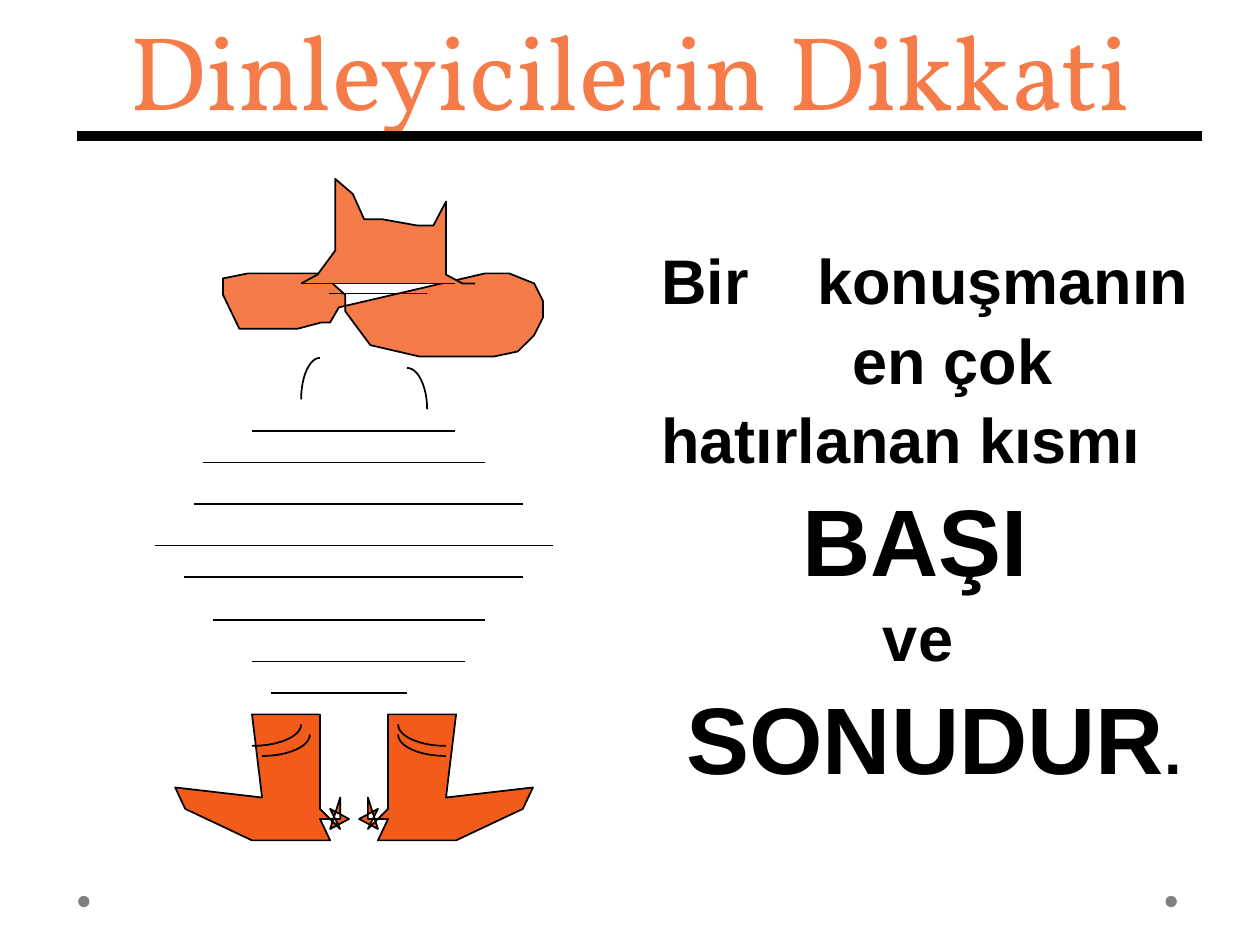
from dataclasses import dataclass
from typing import Any

from lxml import etree
from pptx import Presentation
from pptx.dml.color import RGBColor
from pptx.enum import shapes, text
from pptx.oxml import ns
from pptx.util import Inches, Pt

COLORS = {"black": "000000", "gray": "808080", "hat": "F57B49", "boot": "F35B1B"}

BRIM = [
    (2.55, 2.56), (2.36, 2.61), (1.9, 2.61), (1.77, 2.34), (1.77, 2.21),
    (1.97, 2.17), (2.55, 2.17), (2.74, 2.34), (2.74, 2.47), (2.94, 2.74),
    (3.33, 2.83), (3.92, 2.83), (4.11, 2.79), (4.24, 2.66), (4.31, 2.52),
    (4.31, 2.39), (4.24, 2.25), (4.04, 2.17), (3.85, 2.17), (2.69, 2.44),
    (2.62, 2.56), (2.55, 2.56),
]
CROWN = [
    (2.39, 2.25), (2.52, 2.18), (2.66, 1.99), (2.66, 1.42), (2.8, 1.54),
    (2.89, 1.74), (3.03, 1.74), (3.31, 1.79), (3.44, 1.79), (3.54, 1.6),
    (3.54, 2.18), (3.67, 2.25), (3.77, 2.25),
]
RIGHT_BOOT = [
    (3.08, 5.67), (3.62, 5.67), (3.54, 6.33), (4.23, 6.25), (4.15, 6.42),
    (3.62, 6.67), (3, 6.67), (3.08, 6.5), (2.92, 6.5), (2.92, 6.33),
    (3, 6.58), (2.85, 6.5), (3, 6.42), (2.92, 6.58), (3.08, 6.42), (3.08, 5.67),
]
BOOT_MIRROR = 5.62
HAT_LINES = [(2.39, 3.61, 2.25), (2.61, 3.39, 2.33)]
BODY_LINES = [
    (2, 3.61, 3.42), (1.61, 3.85, 3.67), (1.54, 4.15, 4), (1.23, 4.39, 4.33),
    (1.46, 4.15, 4.58), (1.69, 3.85, 4.92), (2, 3.69, 5.25), (2.15, 3.23, 5.5),
]
SHOULDERS = [(3.23, 3.25, 0.16, 0.33, 270), (2.54, 3.17, 0.15, 0.33, 180)]
BOOT_FOLDS = [
    (2, 5.75, 0.39, 0.17, 0), (3.54, 5.75, 0.38, 0.17, 90),
    (3.54, 5.83, 0.38, 0.17, 90), (2.08, 5.83, 0.38, 0.17, 0),
]
MESSAGE = [
    (0, [("Bir\tkonuşmanın", 36)]),
    (1.52, [("en çok", 36)]),
    (0, [("hatırlanan kısmı", 36)]),
    (1.12, [("BAŞI", 54)]),
    (1.76, [("ve", 36)]),
    (0.2, [("SONUDUR", 54), (".", 36)]),
]


def rgb(name):
    return RGBColor.from_string(COLORS[name])


@dataclass
class Painter:
    slide: Any
    line_width: float = 1
    line_color: str = "black"

    def outline(self, shape):
        shape.line.color.rgb = rgb(self.line_color)
        shape.line.width = Pt(self.line_width)

    def dot(self, left, top, size):
        shape = self.slide.shapes.add_shape(
            shapes.MSO_SHAPE.OVAL, Inches(left), Inches(top), Inches(size), Inches(size))
        shape.shadow.inherit = False
        shape.fill.solid()
        shape.fill.fore_color.rgb = rgb("gray")
        shape.line.fill.background()

    def line(self, left, right, y, width=None):
        connector = self.slide.shapes.add_connector(
            shapes.MSO_CONNECTOR.STRAIGHT, Inches(left), Inches(y), Inches(right), Inches(y))
        self.outline(connector)
        if width:
            connector.line.width = Pt(width)
        etree.SubElement(connector._element.spPr, ns.qn("a:effectLst"))

    def polygon(self, points, fill):
        corners = [(Inches(x), Inches(y)) for x, y in points]
        builder = self.slide.shapes.build_freeform(*corners[0])
        builder.add_line_segments(corners[1:], close=False)
        shape = builder.convert_to_shape()
        shape.shadow.inherit = False
        shape.fill.solid()
        shape.fill.fore_color.rgb = rgb(fill)
        self.outline(shape)

    def quarter_arc(self, x, y, radius_x, radius_y, start):
        shape = self.slide.shapes.add_shape(
            shapes.MSO_SHAPE.ARC, Inches(x - radius_x), Inches(y - radius_y),
            Inches(2 * radius_x), Inches(2 * radius_y))
        for index, degrees in enumerate((start, (start + 90) % 360)):
            shape.adjustments[index] = degrees * 0.6
        shape.shadow.inherit = False
        shape.fill.background()
        self.outline(shape)

    def text_box(self, left, top, width, height, anchor):
        box = self.slide.shapes.add_textbox(
            Inches(left), Inches(top), Inches(width), Inches(height))
        frame = box.text_frame
        frame.word_wrap = True
        frame.vertical_anchor = anchor
        return frame

    def run(self, paragraph, words, size, font, color, bold=False):
        run = paragraph.add_run()
        run.text = words
        run.font.size = Pt(size)
        run.font.name = font
        run.font.bold = bold
        run.font.color.rgb = rgb(color)

    def title(self, words):
        frame = self.text_box(0, -0.17, 10, 1.42, text.MSO_ANCHOR.MIDDLE)
        paragraph = frame.paragraphs[0]
        paragraph.alignment = text.PP_ALIGN.CENTER
        self.run(paragraph, words, 60, "Vollkorn", "hat")

    def message(self, lines, tab):
        frame = self.text_box(5.15, 1.84, 4.57, 4.34, text.MSO_ANCHOR.TOP)
        for index, (indent, runs) in enumerate(lines):
            paragraph = frame.add_paragraph() if index else frame.paragraphs[0]
            paragraph.line_spacing = 1.05
            properties = paragraph._p.get_or_add_pPr()
            properties.set("marL", str(Inches(indent)))
            if "\t" in runs[0][0]:
                tabs = etree.SubElement(properties, ns.qn("a:tabLst"))
                etree.SubElement(tabs, ns.qn("a:tab"), pos=str(Inches(tab)), algn="l")
            for words, size in runs:
                self.run(paragraph, words, size, "Arial", "black", bold=True)


def main():
    presentation = Presentation()
    presentation.slide_width = Inches(10)
    presentation.slide_height = Inches(7.5)
    painter = Painter(presentation.slides.add_slide(presentation.slide_layouts[6]))

    for left in (9.25, 0.62):
        painter.dot(left, 7.11, 0.09)
    painter.title("Dinleyicilerin Dikkati")
    painter.line(0.61, 9.54, 1.08, width=6)
    painter.polygon(BRIM, "hat")
    painter.polygon(CROWN, "hat")
    for left, right, y in HAT_LINES:
        painter.line(left, right, y)
    for arc in SHOULDERS:
        painter.quarter_arc(*arc)
    for left, right, y in BODY_LINES:
        painter.line(left, right, y)
    painter.polygon(RIGHT_BOOT, "boot")
    painter.polygon([(BOOT_MIRROR - x, y) for x, y in RIGHT_BOOT], "boot")
    for arc in BOOT_FOLDS:
        painter.quarter_arc(*arc)
    painter.message(MESSAGE, tab=1.24)
    presentation.save("out.pptx")


if __name__ == "__main__":
    main()
